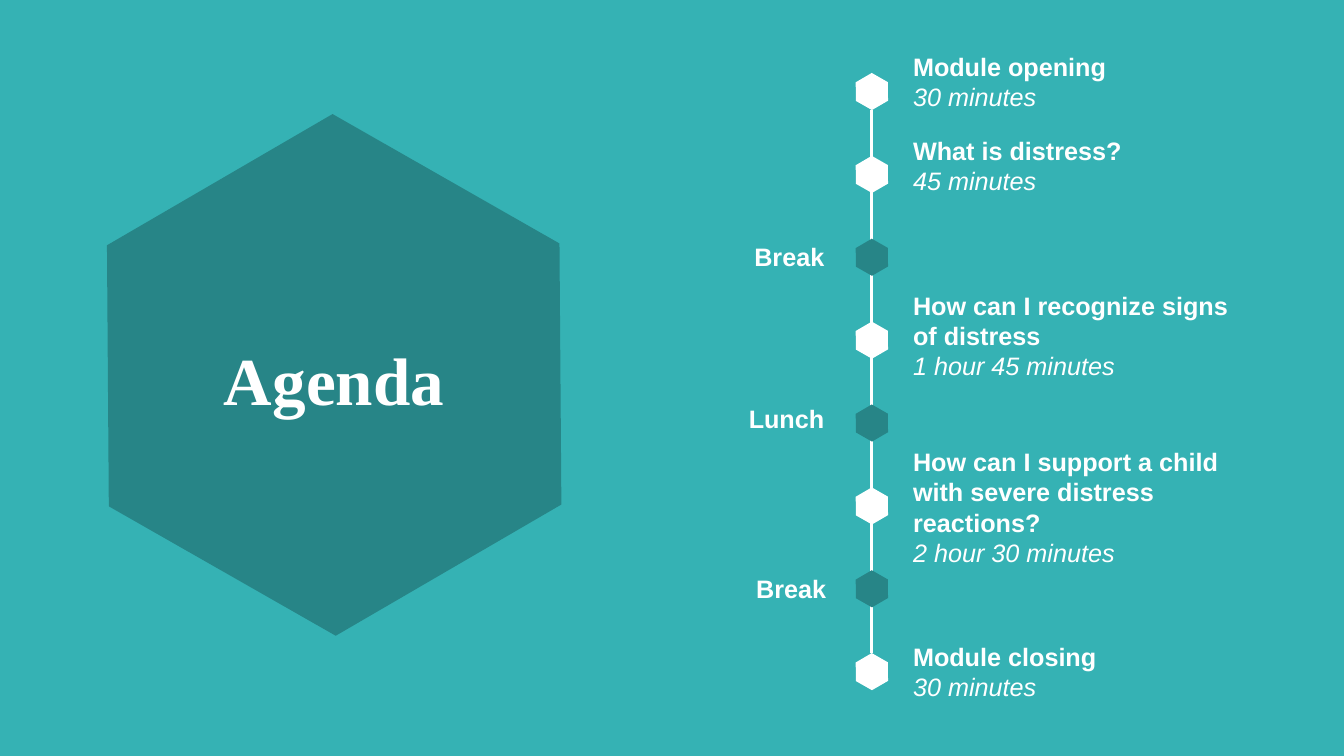
import pptx
import pptx.util
import pptx.dml.color
import pptx.enum.shapes
import pptx.enum.text
import pptx.oxml.ns
import lxml.etree
from dataclasses import dataclass

Pt = pptx.util.Pt
PP_ALIGN = pptx.enum.text.PP_ALIGN
AUTO_SIZE = pptx.enum.text.MSO_AUTO_SIZE


@dataclass(frozen=True)
class Theme:
    background: str = "35B2B4"
    dark: str = "278587"
    light: str = "FFFFFF"
    title_font: str = "Times New Roman"
    body_font: str = "Arial"
    title_size: float = 48
    body_size: float = 18
    line_width: float = 2.25


def rgb(value):
    return pptx.dml.color.RGBColor.from_string(value)


class AgendaSlide:
    """Holds the theme and the current slide; all lengths are in points."""

    def __init__(self, prs, theme):
        self.theme = theme
        self.s = prs.slides.add_slide(prs.slide_layouts[5])
        fill = self.s.background.fill
        fill.solid()
        fill.fore_color.rgb = rgb(theme.background)

    def run(self, p, text, font, size, bold=False, italic=False):
        r = p.add_run()
        r.text = text
        r.font.name = font
        r.font.size = Pt(size)
        r.font.bold = bold
        r.font.italic = italic
        r.font.color.rgb = rgb(self.theme.light)

    def title(self, text, left, top, width, height):
        """Fills the title placeholder and brings it in front of earlier shapes."""
        sp = self.s.shapes.title
        sp.left, sp.top, sp.width, sp.height = map(Pt, (left, top, width, height))
        sp._element.getparent().append(sp._element)
        tf = sp.text_frame
        tf.auto_size = AUTO_SIZE.NONE
        tf.vertical_anchor = pptx.enum.text.MSO_ANCHOR.MIDDLE
        p = tf.paragraphs[0]
        p.alignment = PP_ALIGN.CENTER
        p.line_spacing = 0.9
        self.run(p, text, self.theme.title_font, self.theme.title_size, bold=True)

    def hexagon(self, center_x, center_y, width, height, color):
        """Adds a hexagon turned to stand on a corner."""
        sp = self.s.shapes.add_shape(
            pptx.enum.shapes.MSO_SHAPE.HEXAGON,
            Pt(center_x - width / 2), Pt(center_y - height / 2), Pt(width), Pt(height))
        sp.adjustments[0] = 0.29
        sp.rotation = 29.7
        sp.shadow.inherit = False
        sp.fill.solid()
        sp.fill.fore_color.rgb = rgb(color)
        sp.line.fill.background()

    def vertical_line(self, x, top, bottom):
        line = self.s.shapes.add_connector(
            pptx.enum.shapes.MSO_CONNECTOR.STRAIGHT, Pt(x), Pt(top), Pt(x), Pt(bottom))
        line.line.color.rgb = rgb(self.theme.light)
        line.line.width = Pt(self.theme.line_width)
        properties = line._element.find(pptx.oxml.ns.qn("p:spPr"))
        lxml.etree.SubElement(properties, pptx.oxml.ns.qn("a:effectLst"))

    def text(self, left, top, width, height, heading, duration=None, align=PP_ALIGN.LEFT):
        """Adds a bold heading with an optional italic duration below it."""
        tf = self.s.shapes.add_textbox(Pt(left), Pt(top), Pt(width), Pt(height)).text_frame
        tf.word_wrap = True
        tf.auto_size = AUTO_SIZE.SHAPE_TO_FIT_TEXT
        p = tf.paragraphs[0]
        p.alignment = align
        self.run(p, heading, self.theme.body_font, self.theme.body_size, bold=True)
        if duration:
            p = tf.add_paragraph()
            p.alignment = align
            self.run(p, duration, self.theme.body_font, self.theme.body_size, italic=True)


SESSIONS = [  # top, height, heading, duration
    (33.1, 51, "Module opening", "30 minutes"),
    (92.9, 51, "What is distress?", "45 minutes"),
    (203.8, 72.7, "How can I recognize signs of distress", "1 hour 45 minutes"),
    (315.4, 94.5, "How can I support a child with severe distress reactions?",
     "2 hour 30 minutes"),
    (454.3, 51, "Module closing", "30 minutes"),
]
PAUSES = [(489.3, 168.8, "Break"), (489.3, 284.4, "Lunch"), (490.6, 406.1, "Break")]
MARKERS = "SSPSPSPS"  # S: session, P: pause
TIMELINE_X, FIRST_MARKER_Y, MARKER_STEP = 622.8, 65.4, 59.2


def main():
    prs = pptx.Presentation()
    prs.slide_width, prs.slide_height = Pt(960), Pt(540)
    theme = Theme()
    agenda = AgendaSlide(prs, theme)

    agenda.hexagon(238.7, 267.8, 373.7, 322.6, theme.dark)
    agenda.title("Agenda", 80.6, 252, 316.1, 43.9)

    agenda.vertical_line(TIMELINE_X, 78.5, 466.6)
    for i, kind in enumerate(MARKERS):
        color = theme.light if kind == "S" else theme.dark
        agenda.hexagon(TIMELINE_X, FIRST_MARKER_Y + i * MARKER_STEP, 26.6, 23, color)

    for top, height, heading, duration in SESSIONS:
        agenda.text(645.1, top, 258.5, height, heading, duration)
    for left, top, label in PAUSES:
        agenda.text(left, top, 106.6, 29, label, align=PP_ALIGN.RIGHT)

    prs.save("out.pptx")


if __name__ == "__main__":
    main()
